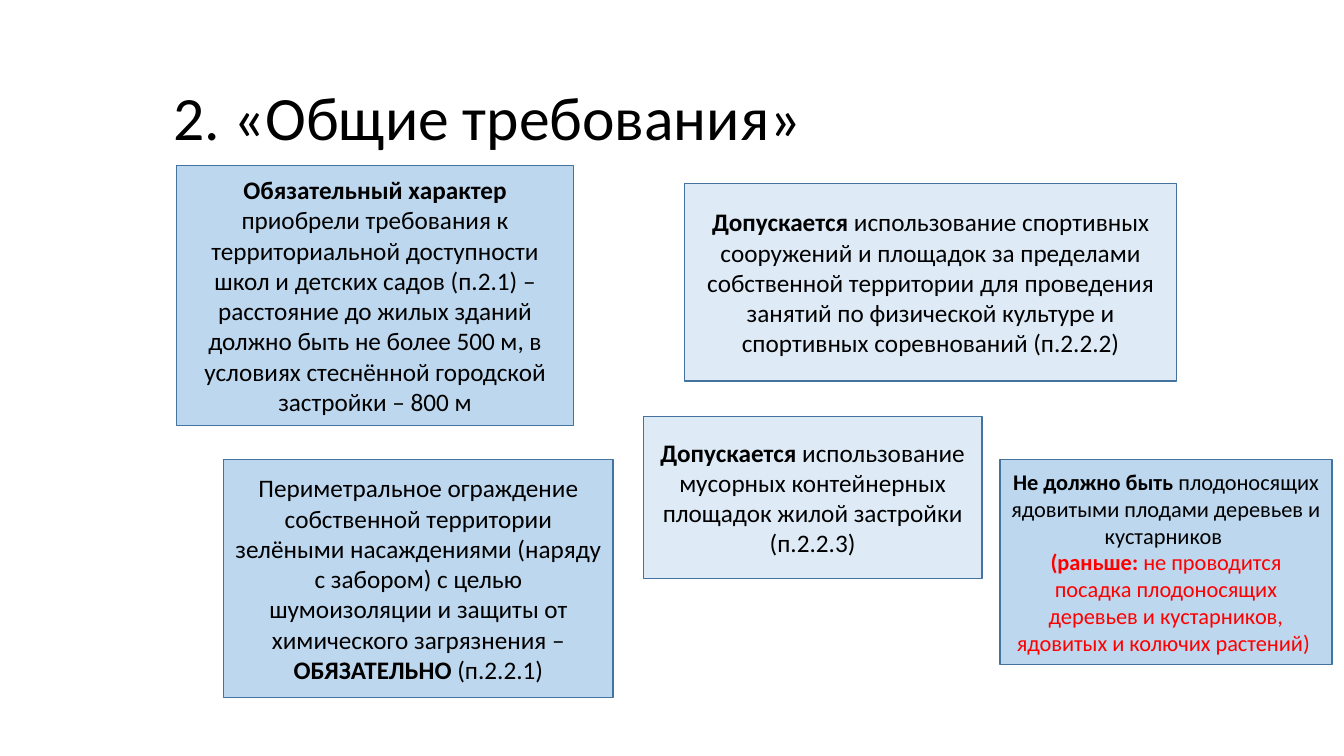
from pptx import Presentation
from pptx import util as u
from pptx.dml.color import RGBColor
from pptx.enum import shapes, text

FONT = "Calibri"
BLACK, RED = "000000", "FF0000"
REQUIRED, ALLOWED, OUTLINE = "BDD7EE", "DEEBF7", "43739E"
SLIDE_WIDTH, SLIDE_HEIGHT = u.Inches(13.33), u.Inches(7.5)

REQUIREMENTS = [
    ((13.13, 21.87, 29.56, 34.4), REQUIRED, 18, [
        [("Обязательный характер ", True, BLACK),
         ("приобрели требования к территориальной доступности школ и детских садов (п.2.1) – "
          "расстояние до жилых зданий должно быть не более 500 м, в условиях стеснённой "
          "городской застройки – 800 м", False, BLACK)]]),
    ((16.65, 60.8, 28.96, 31.47), REQUIRED, 18, [
        [("Периметральное ограждение собственной территории зелёными насаждениями (наряду с "
          "забором) с целью шумоизоляции и защиты от химического загрязнения – ", False, BLACK),
         ("ОБЯЗАТЕЛЬНО", True, BLACK),
         (" (п.2.2.1)", False, BLACK)]]),
    ((50.94, 24.27, 36.61, 26.13), ALLOWED, 18, [
        [("Допускается ", True, BLACK),
         ("использование спортивных сооружений и площадок за пределами собственной территории "
          "для проведения занятий по физической культуре и спортивных соревнований (п.2.2.2)",
          False, BLACK)]]),
    ((47.86, 55.07, 25.21, 21.47), ALLOWED, 18, [
        [("Допускается", True, BLACK),
         (" использование мусорных контейнерных площадок жилой застройки (п.2.2.3)",
          False, BLACK)]]),
    ((74.42, 60.8, 24.68, 27.07), REQUIRED, 16, [
        [("Не должно быть ", True, BLACK),
         ("плодоносящих ядовитыми плодами деревьев и кустарников ", False, BLACK)],
        [("(раньше: ", True, RED),
         ("не проводится посадка плодоносящих деревьев и кустарников, ядовитых и колючих "
          "растений) ", False, RED)]]),
]


def color(value):
    return RGBColor.from_string(value)


def place(percentages):
    sides = (SLIDE_WIDTH, SLIDE_HEIGHT) * 2
    return [round(side * share / 100) for side, share in zip(sides, percentages)]


def write_text(shape, paragraphs, size, alignment, line_spacing=1.0):
    frame = shape.text_frame
    frame.word_wrap = True
    frame.vertical_anchor = text.MSO_ANCHOR.MIDDLE
    for index, runs in enumerate(paragraphs):
        paragraph = frame.add_paragraph() if index else frame.paragraphs[0]
        paragraph.alignment = alignment
        paragraph.line_spacing = line_spacing
        for words, bold, shade in runs:
            run = paragraph.add_run()
            run.text = words
            run.font.name = FONT
            run.font.size = u.Pt(size)
            run.font.bold = bold
            run.font.color.rgb = color(shade)


def add_title(slide, area, words):
    title = slide.shapes.add_textbox(*place(area))
    write_text(title, [[(words, False, BLACK)]], 44, text.PP_ALIGN.LEFT, 0.9)


def add_requirement(slide, area, fill, size, paragraphs):
    box = slide.shapes.add_shape(shapes.MSO_SHAPE.RECTANGLE, *place(area))
    box.shadow.inherit = False
    box.fill.solid()
    box.fill.fore_color.rgb = color(fill)
    box.line.color.rgb = color(OUTLINE)
    box.line.width = u.Pt(1)
    write_text(box, paragraphs, size, text.PP_ALIGN.CENTER)


def main():
    presentation = Presentation()
    presentation.slide_width = SLIDE_WIDTH
    presentation.slide_height = SLIDE_HEIGHT
    slide = presentation.slides.add_slide(presentation.slide_layouts[6])
    add_title(slide, (12.15, 10, 82.22, 11.87), "2. «Общие требования»")
    for requirement in REQUIREMENTS:
        add_requirement(slide, *requirement)
    presentation.save("out.pptx")


if __name__ == "__main__":
    main()
